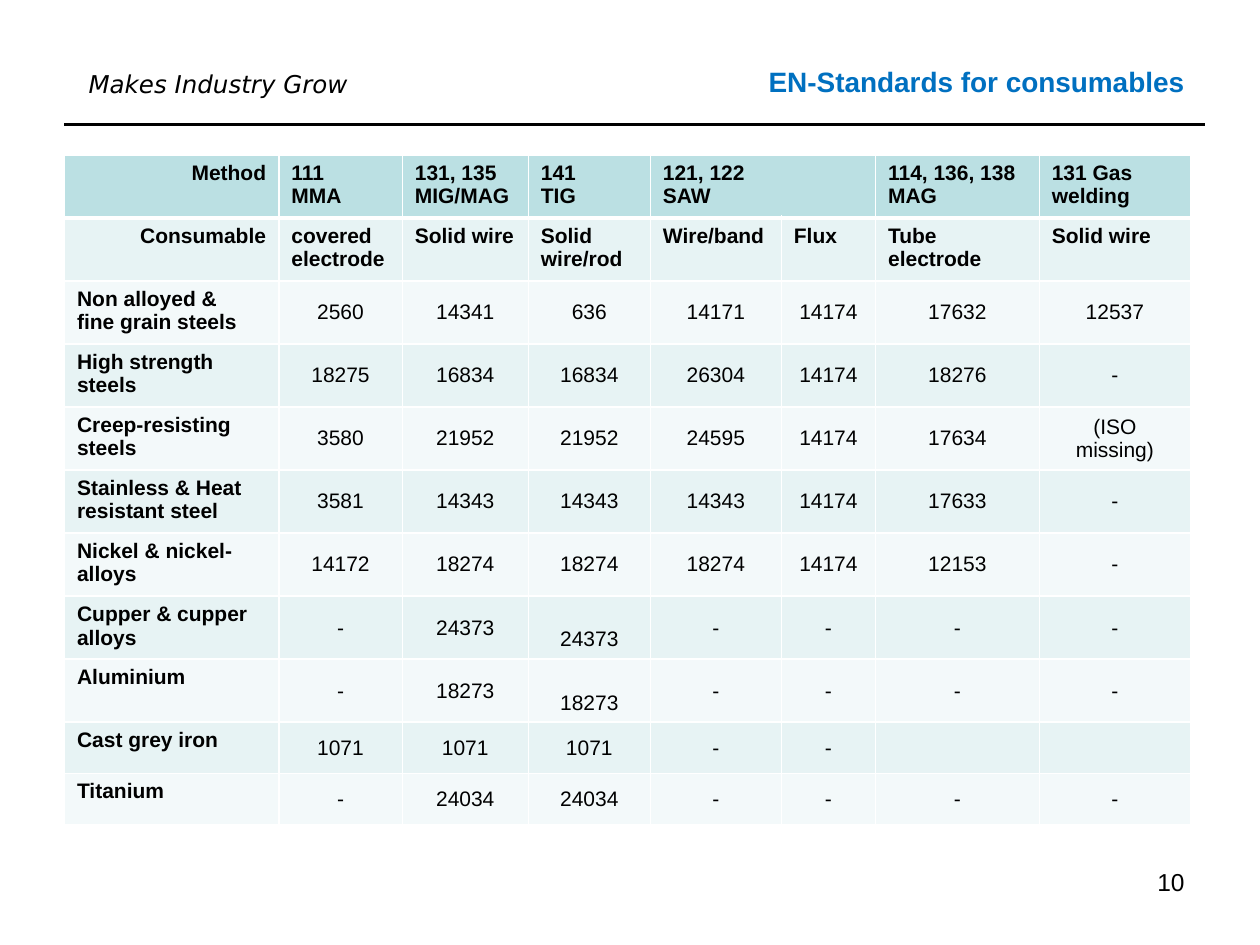
from lxml import etree
from pptx import Presentation
from pptx.dml.color import RGBColor
from pptx.enum.shapes import MSO_CONNECTOR
from pptx.enum.text import MSO_ANCHOR, PP_ALIGN
from pptx.oxml.ns import qn
from pptx.util import Cm, Pt

LEFT, CENTER, RIGHT = PP_ALIGN.LEFT, PP_ALIGN.CENTER, PP_ALIGN.RIGHT
TOP, MIDDLE = MSO_ANCHOR.TOP, MSO_ANCHOR.MIDDLE
STRAIGHT = MSO_CONNECTOR.STRAIGHT

COLORS = {
    "text": "000000",
    "title": "0070C0",
    "grid": "FFFFFF",
    "header": "BBE0E3",
    "band_dark": "E7F3F4",
    "band_light": "F3F9FA",
}

COLUMN_WIDTHS = [4.32, 2.49, 2.54, 2.46, 2.64, 1.9, 3.3, 3.05]
TALL_ROW, SHORT_ROW = 1.27, 1.03
SHORT_ROWS = 2
SAW_COLUMN = 4
LOWERED_CELLS = {(7, 3), (8, 3)}  # these values sit half a line lower

STANDARDS = [
    ["Method", "111\nMMA", "131, 135\nMIG/MAG", "141\nTIG", "121, 122\nSAW", "",
     "114, 136, 138\nMAG", "131 Gas welding"],
    ["Consumable", "covered electrode", "Solid wire", "Solid wire/rod",
     "Wire/band", "Flux", "Tube electrode", "Solid wire"],
    ["Non alloyed &\nfine grain steels", "2560", "14341", "636", "14171",
     "14174", "17632", "12537"],
    ["High strength steels", "18275", "16834", "16834", "26304", "14174",
     "18276", "-"],
    ["Creep-resisting steels", "3580", "21952", "21952", "24595", "14174",
     "17634", "(ISO missing)"],
    ["Stainless & Heat resistant steel", "3581", "14343", "14343", "14343",
     "14174", "17633", "-"],
    ["Nickel & nickel-\nalloys", "14172", "18274", "18274", "18274", "14174",
     "12153", "-"],
    ["Cupper & cupper alloys", "-", "24373", "24373", "-", "-", "-", "-"],
    ["Aluminium", "-", "18273", "18273", "-", "-", "-", "-"],
    ["Cast grey iron", "1071", "1071", "1071", "-", "-", "", ""],
    ["Titanium", "-", "24034", "24034", "-", "-", "-", "-"],
]


def rgb(name):
    return RGBColor.from_string(COLORS[name])


def format_text(frame, size, align, color="text", font="Arial", bold=False,
                italic=False):
    for paragraph in frame.paragraphs:
        paragraph.alignment = align
        style = paragraph.font
        style.name, style.size = font, Pt(size)
        style.bold, style.italic = bold, italic
        style.color.rgb = rgb(color)
        for run in paragraph.runs:
            run.font.name, run.font.size = font, Pt(size)
            run.font.bold, run.font.italic = bold, italic
            run.font.color.rgb = rgb(color)


def add_label(slide, box, text, size, align, anchor=TOP, **style):
    frame = slide.shapes.add_textbox(*map(Cm, box)).text_frame
    frame.word_wrap = True
    frame.vertical_anchor = anchor
    frame.text = text
    format_text(frame, size, align, **style)


def set_borders(cell, top, bottom):
    properties = cell._tc.get_or_add_tcPr()
    for edge, width in (("L", 1), ("R", 1), ("T", top), ("B", bottom)):
        line = etree.SubElement(properties, qn(f"a:ln{edge}"), w=str(Pt(width)))
        fill = etree.SubElement(line, qn("a:solidFill"))
        etree.SubElement(fill, qn("a:srgbClr"), val=COLORS["grid"])


def add_header(slide, left, top, width):
    # Slogan and slide title
    add_label(slide, (left - 0.2, top + 0.51, 6.6, 0.84), "Makes Industry Grow",
              14, CENTER, font="DejaVu Sans", italic=True)
    add_label(slide, (left + 7.59, top, 15.24, 1.75),
              "EN-Standards for consumables", 16, RIGHT, MIDDLE,
              color="title", bold=True)

    # Rule below both
    rule_y = Cm(top + 1.75)
    rule = slide.shapes.add_connector(STRAIGHT, Cm(left), rule_y,
                                      Cm(left + width), rule_y)
    rule.line.color.rgb = rgb("text")
    rule.line.width = Pt(1.5)
    etree.SubElement(rule._element.spPr, qn("a:effectLst"))


def add_standards_table(slide, left, top):
    row_count = len(STANDARDS)
    heights = [TALL_ROW] * (row_count - SHORT_ROWS) + [SHORT_ROW] * SHORT_ROWS
    table = slide.shapes.add_table(
        row_count, len(COLUMN_WIDTHS), Cm(left), Cm(top),
        Cm(sum(COLUMN_WIDTHS)), Cm(sum(heights))).table
    table.first_row = table.horz_banding = False
    for column, width in zip(table.columns, COLUMN_WIDTHS):
        column.width = Cm(width)
    for row, height in zip(table.rows, heights):
        row.height = Cm(height)

    # Cells: two heading rows, a label column, then centred numbers
    for r, values in enumerate(STANDARDS):
        band = "header" if r == 0 else ("band_dark" if r % 2 else "band_light")
        for c, value in enumerate(values):
            cell = table.cell(r, c)
            set_borders(cell, 3 if r == 1 else 1, 3 if r == 0 else 1)
            cell.fill.solid()
            cell.fill.fore_color.rgb = rgb(band)
            cell.text_frame.text = value
            heading = r < 2 or c == 0
            if heading:
                align = RIGHT if r < 2 and c == 0 else LEFT
            else:
                align = CENTER
                cell.vertical_anchor = MIDDLE
            if (r, c) in LOWERED_CELLS:
                cell.margin_top = Cm(0.61)
            format_text(cell.text_frame, 12, align, bold=heading)

    # One SAW heading over wire and flux
    table.cell(0, SAW_COLUMN).merge(table.cell(0, SAW_COLUMN + 1))


def add_page_number(slide, box):
    add_label(slide, box, "10", 14, RIGHT)


def main():
    presentation = Presentation()
    presentation.slide_width, presentation.slide_height = Cm(25.4), Cm(19.05)
    slide = presentation.slides.add_slide(presentation.slide_layouts[6])
    add_header(slide, 1.3, 0.76, 23)
    add_standards_table(slide, 1.3, 3.12)
    add_page_number(slide, (18.21, 17.35, 5.92, 1.32))
    presentation.save("out.pptx")


if __name__ == "__main__":
    main()
